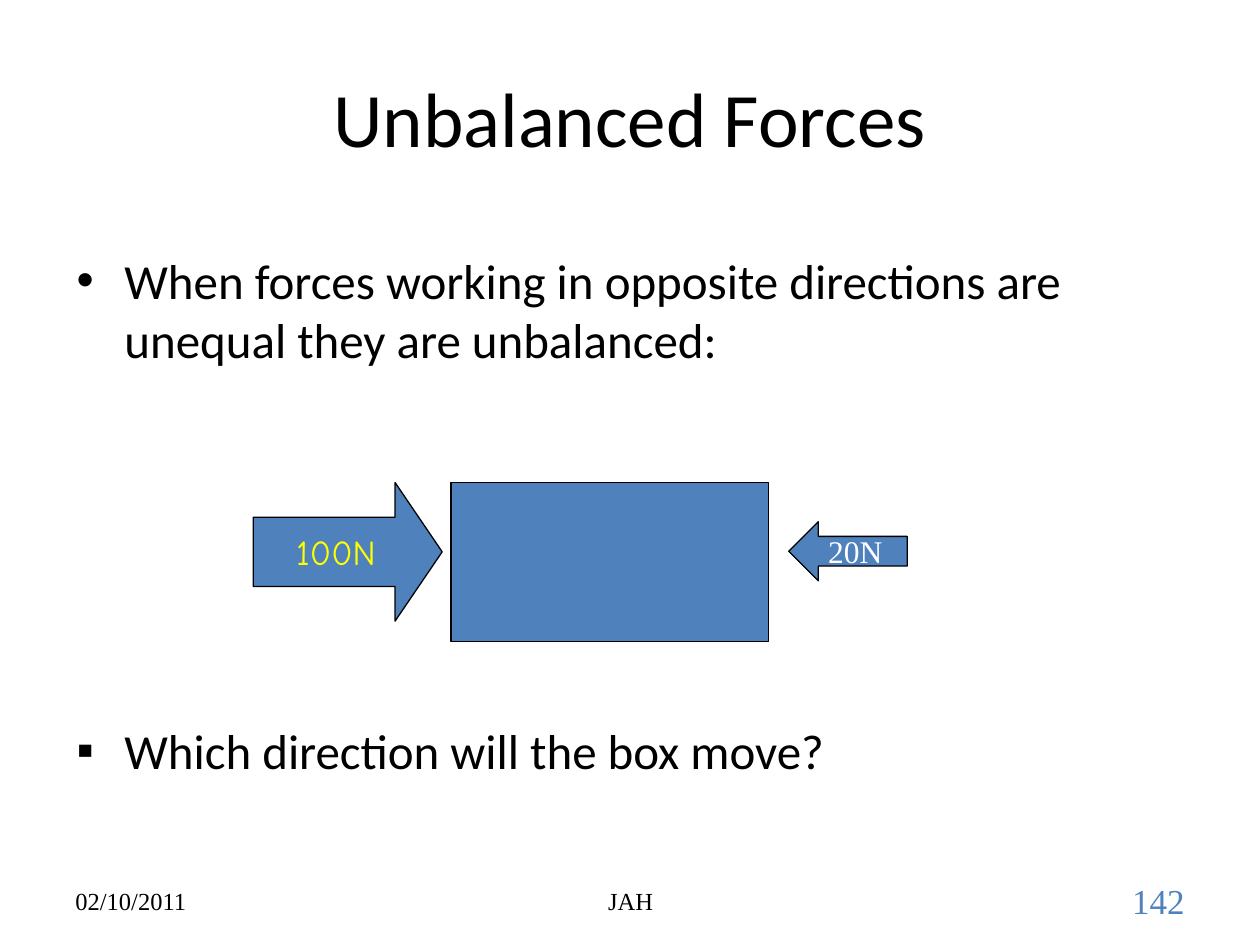
import pptx
import pptx.dml.color
import pptx.enum.shapes
import pptx.enum.text
import pptx.util
from lxml import etree

Inches = pptx.util.Inches
Pt = pptx.util.Pt
Align = pptx.enum.text.PP_ALIGN
Anchor = pptx.enum.text.MSO_ANCHOR
Shape = pptx.enum.shapes.MSO_SHAPE


def color(value):
    return pptx.dml.color.RGBColor.from_string(value)


def write(shape, text, size, font="Times New Roman", fill="000000",
          align=Align.LEFT, anchor=Anchor.MIDDLE, wrap=True, bullet=None, before=0):
    frame = shape.text_frame
    frame.word_wrap = wrap
    frame.vertical_anchor = anchor
    paragraph = frame.add_paragraph() if frame.text else frame.paragraphs[0]
    paragraph.alignment = align
    paragraph.space_before = Pt(before)
    run = paragraph.add_run()
    run.text = text
    run.font.size = Pt(size)
    run.font.name = font
    run.font.color.rgb = color(fill)
    if bullet:
        properties = paragraph._p.get_or_add_pPr()
        properties.set("marL", str(Inches(0.38)))
        properties.set("indent", str(-Inches(0.38)))
        namespace = "{http://schemas.openxmlformats.org/drawingml/2006/main}"
        etree.SubElement(properties, namespace + "buFont", typeface="Arial")
        etree.SubElement(properties, namespace + "buChar", char=bullet)


presentation = pptx.Presentation()
presentation.slide_width = Inches(10)
presentation.slide_height = Inches(7.5)
slide = presentation.slides.add_slide(presentation.slide_layouts[6])

footers = [
    (7.17, 2.33, "142", 20, "4F81BD", Align.RIGHT),
    (0.5, 2.33, "02/10/2011", 14, "000000", Align.LEFT),
    (3.42, 3.17, "JAH", 14, "000000", Align.CENTER),
]
for left, width, text, size, fill, align in footers:
    footer = slide.shapes.add_textbox(Inches(left), Inches(6.95), Inches(width), Inches(0.4))
    write(footer, text, size, fill=fill, align=align)

title = slide.shapes.add_textbox(Inches(0.5), Inches(0.3), Inches(9), Inches(1.25))
write(title, "Unbalanced Forces", 44, font="Calibri", align=Align.CENTER)

body = slide.shapes.add_textbox(Inches(0.51), Inches(1.94), Inches(9), Inches(4.95))
bullets = [
    ("When forces working in opposite directions are unequal they are unbalanced:", "•", 0),
    ("Which direction will the box move?", "▪", 201),
]
for text, bullet, before in bullets:
    write(body, text, 28, font="Calibri", anchor=Anchor.TOP, bullet=bullet, before=before)

diagram = [
    (Shape.RECTANGLE, 3.58, 3.83, 2.52, 1.26, [], None),
    (Shape.RIGHT_ARROW, 2.01, 3.83, 1.5, 1.1, [0.5, 0.34],
     dict(text="100N", size=20, font="Comic Neue", fill="FFFF00")),
    (Shape.LEFT_ARROW, 6.26, 4.14, 0.94, 0.47, [0.5, 0.5],
     dict(text="20N", size=18, fill="FFFFFF")),
]
for kind, left, top, width, height, adjustments, label in diagram:
    shape = slide.shapes.add_shape(kind, Inches(left), Inches(top), Inches(width), Inches(height))
    shape.shadow.inherit = False
    shape.fill.solid()
    shape.fill.fore_color.rgb = color("4F81BD")
    shape.line.color.rgb = color("000000")
    shape.line.width = Pt(0.75)
    for index, adjustment in enumerate(adjustments):
        shape.adjustments[index] = adjustment
    if label:
        write(shape, align=Align.CENTER, wrap=False, **label)

presentation.save("out.pptx")
